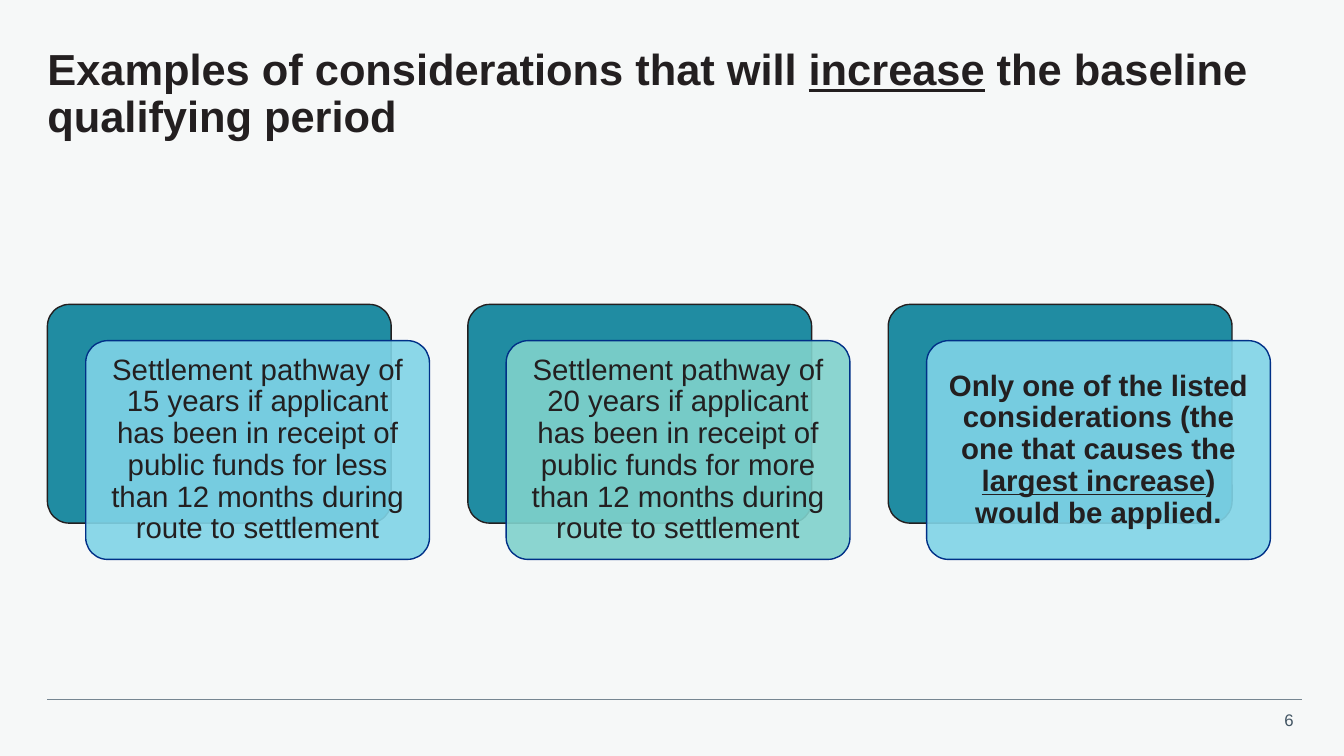
import pptx
import pptx.dml.color
import pptx.enum.shapes
import pptx.enum.text
import pptx.oxml
import pptx.oxml.ns
import pptx.util
from pptx.util import Inches

INK = "231F20"
TEAL = "208CA2"
NAVY = "003087"
SKY = "80D4E7"
MINT = "80D2CC"
CARD_WIDTH, CARD_HEIGHT = 3.41, 2.17
CARD_PITCH = 4.17
FRONT_SHIFT_X, FRONT_SHIFT_Y = 0.38, 0.36

TITLE = [
    ("Examples of considerations that will ", False),
    ("increase", True),
    (" the baseline qualifying period", False),
]
CARDS = [
    (SKY, False, [("Settlement pathway of 15 years if applicant has been in receipt of "
                   "public funds for less than 12 months during route to settlement", False)]),
    (MINT, False, [("Settlement pathway of 20 years if applicant has been in receipt of "
                    "public funds for more than 12 months during route to settlement", False)]),
    (SKY, True, [("Only one of the listed considerations (the one that causes the ", False),
                 ("largest increase", True),
                 (") would be applied.", False)]),
]


def color(value):
    """Turn a hex string into a colour."""
    return pptx.dml.color.RGBColor.from_string(value)


def write(frame, spans, size, ink, align, bold=False, inset=0):
    """Fill a text frame with one paragraph of optionally underlined spans."""
    frame.word_wrap = True
    frame.auto_size = pptx.enum.text.MSO_AUTO_SIZE.NONE
    frame.vertical_anchor = pptx.enum.text.MSO_ANCHOR.MIDDLE
    frame.margin_left = frame.margin_right = Inches(inset)
    frame.margin_top = frame.margin_bottom = Inches(inset)
    para = frame.paragraphs[0]
    para.alignment = align
    para.line_spacing = 0.9
    para.font.name = "Arial"
    para.font.size = pptx.util.Pt(size)
    para.font.bold = bold
    para.font.color.rgb = color(ink)
    for text, underlined in spans:
        span = para.add_run()
        span.text = text
        if underlined:
            span.font.underline = True


def add_title(page, left, top, width, height):
    """Place the heading in the title placeholder."""
    title = page.shapes.title
    title.left, title.top = Inches(left), Inches(top)
    title.width, title.height = Inches(width), Inches(height)
    write(title.text_frame, TITLE, 31, INK, pptx.enum.text.PP_ALIGN.LEFT, bold=True)


def add_panel(page, left, top, fill, outline):
    """Draw one rounded panel of a card."""
    panel = page.shapes.add_shape(
        pptx.enum.shapes.MSO_SHAPE.ROUNDED_RECTANGLE,
        Inches(left), Inches(top), Inches(CARD_WIDTH), Inches(CARD_HEIGHT))
    panel.adjustments[0] = 0.1
    panel.shadow.inherit = False
    panel.fill.solid()
    panel.fill.fore_color.rgb = color(fill)
    panel.line.color.rgb = color(outline)
    panel.line.width = pptx.util.Pt(1)
    return panel


def add_card(page, left, top, fill, bold, spans):
    """Draw a teal panel with a translucent text panel in front."""
    add_panel(page, left, top, TEAL, INK)
    front = add_panel(page, left + FRONT_SHIFT_X, top + FRONT_SHIFT_Y, fill, NAVY)
    shade = front.fill._xPr.find(".//" + pptx.oxml.ns.qn("a:srgbClr"))
    shade.append(pptx.oxml.parse_xml(
        f'<a:alpha {pptx.oxml.ns.nsdecls("a")} val="90000"/>'))
    write(front.text_frame, spans, 21, INK, pptx.enum.text.PP_ALIGN.CENTER, bold, 0.09)


def add_footer(page, left, top, width):
    """Draw the rule and the page number below it."""
    rule = page.shapes.add_connector(
        pptx.enum.shapes.MSO_CONNECTOR.STRAIGHT,
        Inches(left), Inches(top), Inches(left + width), Inches(top))
    rule.line.color.rgb = color("768692")
    rule.line.width = pptx.util.Pt(0.5)
    rule._element.spPr.append(pptx.oxml.parse_xml(
        f'<a:effectLst {pptx.oxml.ns.nsdecls("a")}/>'))
    number = page.shapes.add_textbox(
        Inches(left + width - 0.39), Inches(top + 0.06), Inches(0.41), Inches(0.3))
    write(number.text_frame, [("6", False)], 12, "425563",
          pptx.enum.text.PP_ALIGN.RIGHT, inset=0.1)


def main():
    """Build the slide and save it."""
    deck = pptx.Presentation()
    deck.slide_width, deck.slide_height = Inches(13.33), Inches(7.5)
    page = deck.slides.add_slide(deck.slide_layouts.get_by_name("Title Only"))
    page.background.fill.solid()
    page.background.fill.fore_color.rgb = color("F6F8F8")
    add_title(page, 0.47, 0.47, 12.47, 0.95)
    for index, (fill, bold, spans) in enumerate(CARDS):
        add_card(page, 0.47 + index * CARD_PITCH, 3.02, fill, bold, spans)
    add_footer(page, 0.47, 6.94, 12.44)
    deck.save("out.pptx")


if __name__ == "__main__":
    main()
